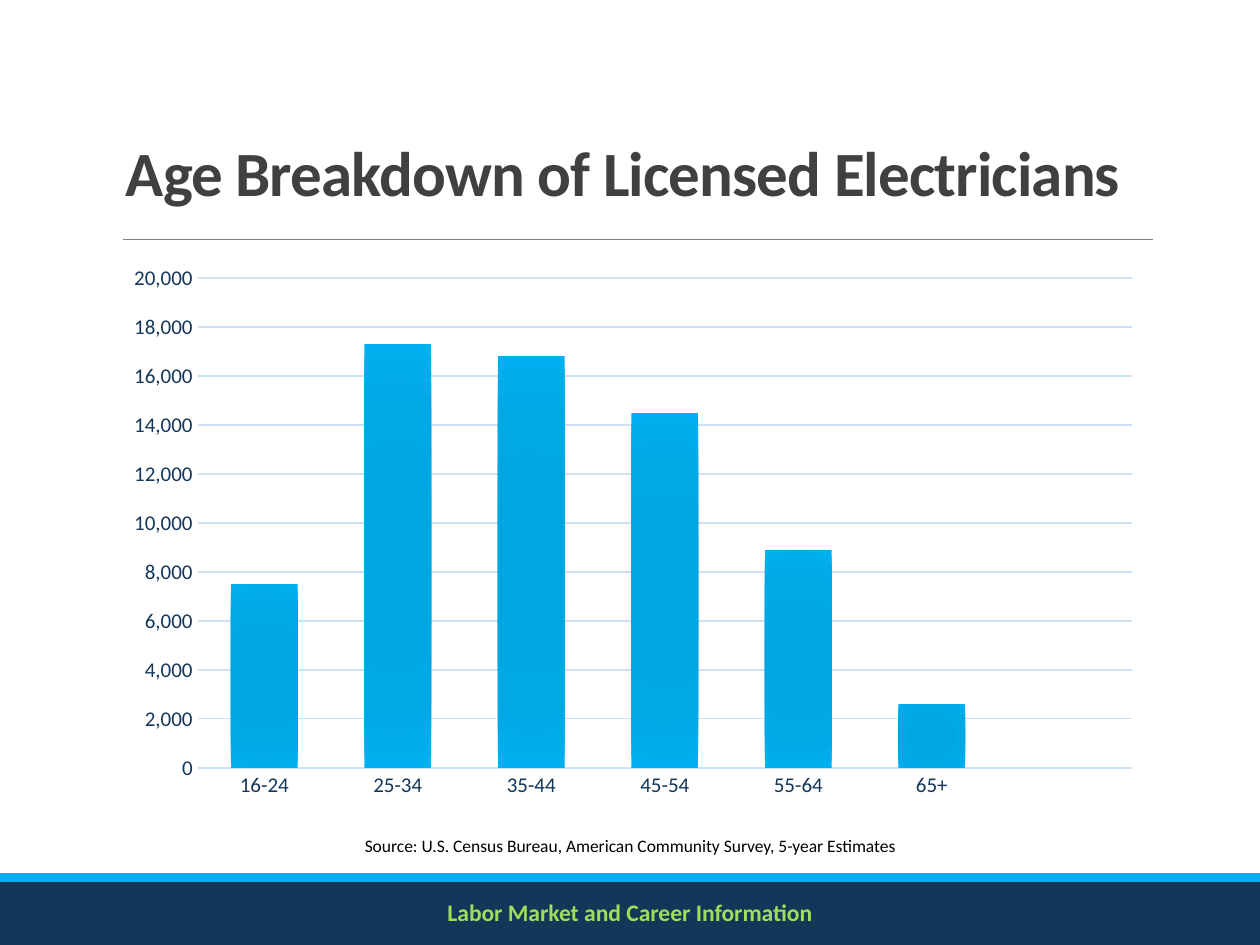
from dataclasses import dataclass

from lxml import etree
from pptx import Presentation
from pptx.chart.data import CategoryChartData
from pptx.dml.color import RGBColor
from pptx.enum.chart import XL_CHART_TYPE as ChartType, XL_TICK_MARK as TickMark
from pptx.enum.shapes import MSO_CONNECTOR as Connector, MSO_SHAPE as Shape
from pptx.enum.text import MSO_ANCHOR as Anchor, PP_ALIGN as Align
from pptx.oxml import parse_xml
from pptx.oxml.ns import nsdecls, qn
from pptx.util import Inches, Pt


@dataclass(frozen=True)
class Theme:
    font: str = "Calibri"
    navy: str = "133659"
    sky: str = "00B0F0"
    lime: str = "9FDF58"
    charcoal: str = "404040"
    gray: str = "808080"
    black: str = "000000"
    grid: str = "CDE1F4"
    bar_stops: tuple = ((0, "00A4E0"), (34, "00A6E2"), (70, "00A8E5"), (100, "00B0F0"))
    title_size: float = 36
    footer_size: float = 13.5
    axis_size: float = 12
    source_size: float = 10
    hairline: float = 0.5
    gridline: float = 0.75


class SlideBuilder:
    columns, rows = 100, 75

    def __init__(self, deck, theme):
        self.theme = theme
        self.cell_width = deck.slide_width / self.columns
        self.cell_height = deck.slide_height / self.rows
        self.slide = deck.slides.add_slide(deck.slide_layouts[6])

    def place(self, column, row, width, height):
        return (round(column * self.cell_width), round(row * self.cell_height),
                round(width * self.cell_width), round(height * self.cell_height))

    def style_font(self, font, size, color, bold=False):
        font.name = self.theme.font
        font.size = Pt(size)
        font.bold = bold
        font.color.rgb = RGBColor.from_string(color)

    def style_line(self, line, color, width):
        line.color.rgb = RGBColor.from_string(color)
        line.width = Pt(width)

    def band(self, area, color):
        band = self.slide.shapes.add_shape(Shape.RECTANGLE, *self.place(*area))
        band.shadow.inherit = False
        band.fill.solid()
        band.fill.fore_color.rgb = RGBColor.from_string(color)
        band.line.fill.background()

    def rule(self, left, right, row):
        x, y, width, _ = self.place(left, row, right - left, 0)
        rule = self.slide.shapes.add_connector(Connector.STRAIGHT, x, y, x + width, y)
        self.style_line(rule.line, self.theme.gray, self.theme.hairline)
        etree.SubElement(rule.line._get_or_add_ln().getparent(), qn("a:effectLst"))

    def text(self, area, wording, size, color, bold=False, align=Align.CENTER,
             anchor=Anchor.TOP, line_spacing=None, tracking=None):
        frame = self.slide.shapes.add_textbox(*self.place(*area)).text_frame
        frame.word_wrap = True
        frame.vertical_anchor = anchor
        paragraph = frame.paragraphs[0]
        paragraph.text = wording
        paragraph.alignment = align
        paragraph.line_spacing = line_spacing
        self.style_font(paragraph.font, size, color, bold)
        if tracking is not None:
            run = paragraph.runs[0]
            run.font._element.set("spc", str(round(tracking * 100)))

    def radial_fill(self, series):
        stops = "".join(
            f'<a:gs pos="{share * 1000}"><a:srgbClr val="{color}"/></a:gs>'
            for share, color in self.theme.bar_stops)
        series.format.fill.solid()
        properties = series._element.find(qn("c:spPr"))
        solid = properties.find(qn("a:solidFill"))
        properties.replace(solid, parse_xml(
            f'<a:gradFill {nsdecls("a")} rotWithShape="1"><a:gsLst>{stops}</a:gsLst>'
            '<a:path path="circle"><a:fillToRect l="100000" t="100000" r="100000" b="100000"/>'
            '</a:path></a:gradFill>'))

    def column_chart(self, area, categories, name, values):
        theme = self.theme
        data = CategoryChartData()
        data.categories = categories
        data.add_series(name, values)
        chart = self.slide.shapes.add_chart(
            ChartType.COLUMN_CLUSTERED, *self.place(*area), data).chart
        chart.has_legend = False
        chart.has_title = False
        self.style_font(chart.font, theme.source_size, theme.black)
        for axis in (chart.category_axis, chart.value_axis):
            axis.major_tick_mark = axis.minor_tick_mark = TickMark.NONE
            self.style_font(axis.tick_labels.font, theme.axis_size, theme.navy)
        self.style_line(chart.category_axis.format.line, theme.grid, theme.gridline)
        amounts = chart.value_axis
        amounts.minimum_scale, amounts.maximum_scale, amounts.major_unit = 0, 20000, 2000
        amounts.format.line.fill.background()
        amounts.tick_labels.number_format = "#,##0"
        amounts.tick_labels.number_format_is_linked = False
        self.style_line(amounts.major_gridlines.format.line, theme.grid, theme.gridline)
        plot = chart.plots[0]
        plot.gap_width = 100
        plot.overlap = -24
        plot.vary_by_categories = False
        self.radial_fill(plot.series[0])


def main():
    deck = Presentation()
    deck.slide_width, deck.slide_height = Inches(10), Inches(7.5)
    theme = Theme()
    page = SlideBuilder(deck, theme)

    page.band((0, 70, 100, 5), theme.navy)
    page.band((0, 69.3, 100, 0.7), theme.sky)
    page.rule(9.8, 91.5, 19)
    page.text((0, 70.8, 100, 3.5), "Labor Market and Career Information",
              theme.footer_size, theme.lime, bold=True)
    page.text((9, 9.2, 88.5, 9.8), "Age Breakdown of Licensed Electricians",
              theme.title_size, theme.charcoal, bold=True, align=Align.LEFT,
              anchor=Anchor.MIDDLE, line_spacing=0.85, tracking=-0.5)
    page.column_chart((9, 20.2, 82.5, 44),
                      ["16-24", "25-34", "35-44", "45-54", "55-64", "65+", ""],
                      "Series 1", [7500, 17300, 16800, 14500, 8900, 2600, None])
    page.text((0, 65.8, 100, 2.7),
              "Source: U.S. Census Bureau, American Community Survey, 5-year Estimates",
              theme.source_size, theme.black)
    deck.save("out.pptx")


if __name__ == "__main__":
    main()
